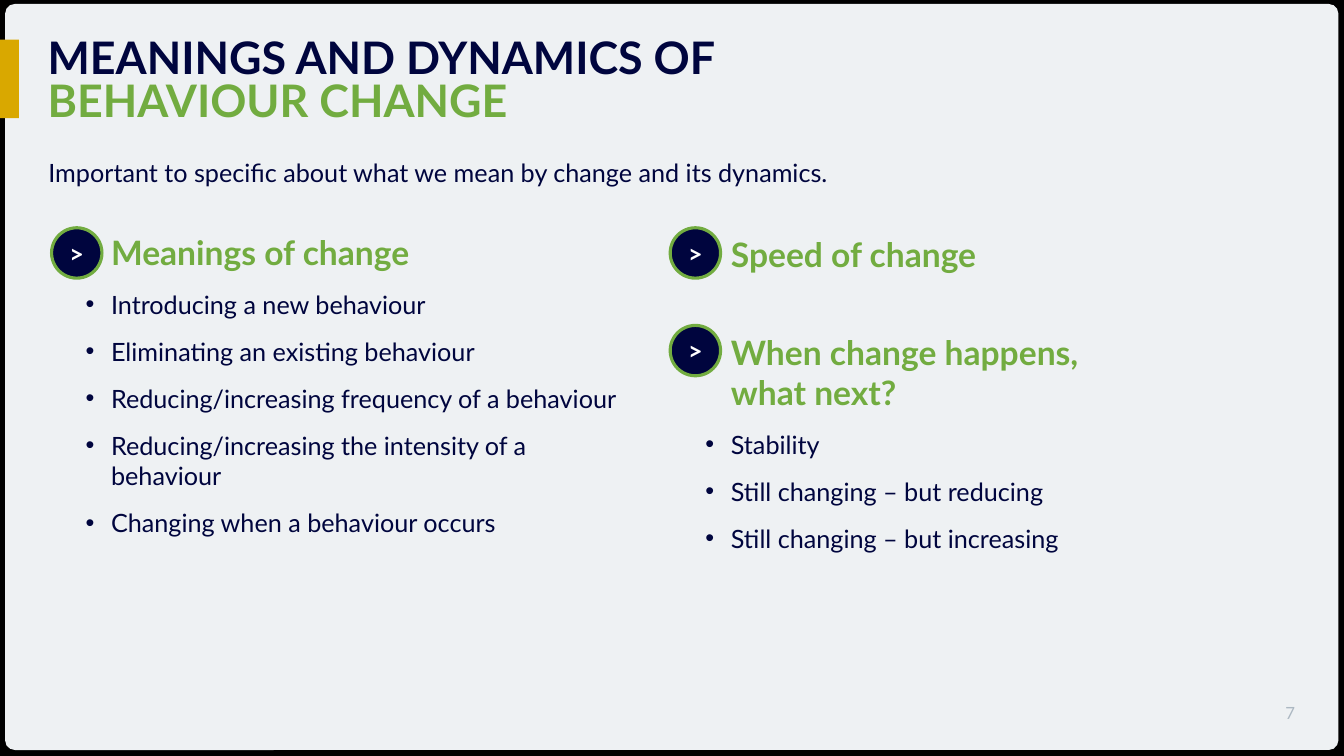
from lxml import etree
from pptx import Presentation
from pptx.dml.color import RGBColor
from pptx.enum.shapes import MSO_SHAPE
from pptx.enum.text import MSO_ANCHOR, PP_ALIGN
from pptx.oxml.ns import qn
from pptx.util import Cm, Pt

RECT, ROUNDED, OVAL = MSO_SHAPE.RECTANGLE, MSO_SHAPE.ROUNDED_RECTANGLE, MSO_SHAPE.OVAL
TOP, MIDDLE, BOTTOM = MSO_ANCHOR.TOP, MSO_ANCHOR.MIDDLE, MSO_ANCHOR.BOTTOM
CENTER, RIGHT = PP_ALIGN.CENTER, PP_ALIGN.RIGHT

BLACK = RGBColor(0x00, 0x00, 0x00)
WHITE = RGBColor(0xFF, 0xFF, 0xFF)
PALE = RGBColor(0xEE, 0xF1, 0xF3)
GOLD = RGBColor(0xD9, 0xA8, 0x00)
NAVY = RGBColor(0x00, 0x05, 0x3E)
GREEN = RGBColor(0x72, 0xAC, 0x40)
GREY = RGBColor(0xAC, 0xB8, 0xC2)

TITLE = ["MEANINGS AND DYNAMICS OF ", "BEHAVIOUR CHANGE"]
INTRO = "Important to specific about what we mean by change and its dynamics."
MEANINGS = [
    ("Meanings of change", [
        "Introducing a new behaviour",
        "Eliminating an existing behaviour",
        "Reducing/increasing frequency of a behaviour",
        "Reducing/increasing the intensity of a behaviour",
        "Changing when a behaviour occurs",
    ]),
]
DYNAMICS = [
    ("Speed of change", []),
    ("When change happens, \vwhat next?", [
        "Stability",
        "Still changing – but reducing",
        "Still changing – but increasing",
    ]),
]
COLUMNS = [
    (MEANINGS, (2.16, 5.84, 14.05, 7.77)),
    (DYNAMICS, (17.78, 5.89, 14.96, 8.13)),
]
MARKER = ">"
PAGE = "7"

SLIDE_W, SLIDE_H = 33.87, 19.05
INDENT = 0.64
MARKER_SIZE, MARKER_TOP, SECTION_STEP = 1.27, 5.74, 2.46
MARKER_LEFTS = [1.3, 16.89]
ITEM_GAP, SECTION_GAP = 12, 41

TITLE_FONT = {"size": Pt(32), "bold": True}
HEADING_FONT = {"size": Pt(24), "bold": True}
BODY_FONT = {"size": Pt(18), "bold": False}
MARKER_FONT = {"size": Pt(18), "bold": True}
PAGE_FONT = {"size": Pt(12), "bold": False}

prs = Presentation()
prs.slide_width, prs.slide_height = Cm(SLIDE_W), Cm(SLIDE_H)
slide = prs.slides.add_slide(prs.slide_layouts[6])


def add_panel(kind, box, fill, line=None):
    panel = slide.shapes.add_shape(kind, *map(Cm, box))
    panel.shadow.inherit = False
    panel.fill.solid()
    panel.fill.fore_color.rgb = fill
    if line is None:
        panel.line.fill.background()
    else:
        panel.line.color.rgb = line
        panel.line.width = Pt(2.25)
    return panel


def add_text(box, anchor=TOP):
    frame = slide.shapes.add_textbox(*map(Cm, box)).text_frame
    frame.word_wrap = True
    frame.vertical_anchor = anchor
    for side in ("left", "top", "right", "bottom"):
        setattr(frame, f"margin_{side}", 0)
    return frame


def style_runs(paragraph, font, color):
    for run in paragraph.runs:
        run.font.name = "Lato"
        run.font.color.rgb = color
        for key, value in font.items():
            setattr(run.font, key, value)


def fill_text(frame, text, font, color, **layout):
    paragraph = frame.paragraphs[0]
    if paragraph.runs:
        paragraph = frame.add_paragraph()
    paragraph.text = text
    for key, value in layout.items():
        setattr(paragraph, key, value)
    style_runs(paragraph, font, color)
    return paragraph


def indent(paragraph, bullet=None):
    properties = paragraph._p.get_or_add_pPr()
    properties.set("marL", str(Cm(INDENT)))
    properties.set("indent", str(-Cm(INDENT) if bullet else 0))
    if bullet:
        etree.SubElement(properties, qn("a:buFont")).set("typeface", "Arial")
        etree.SubElement(properties, qn("a:buChar")).set("char", bullet)


add_panel(RECT, (0, 0, SLIDE_W, SLIDE_H), BLACK)
add_panel(ROUNDED, (0.13, 0.1, 33.6, 18.8), PALE).adjustments[0] = 0.013
add_panel(RECT, (0, 1, 0.48, 1.98), GOLD)

title = fill_text(add_text((1.2, 1, 29.21, 2.18), BOTTOM), "\v".join(TITLE),
                  TITLE_FONT, NAVY, line_spacing=0.8)
title.runs[1].font.color.rgb = GREEN
fill_text(add_text((1.22, 4.04, 26.42, 0.69)), INTRO, BODY_FONT, NAVY, line_spacing=0.9)

for (sections, box), marker_left in zip(COLUMNS, MARKER_LEFTS):
    column = add_text(box)
    for number, (heading, items) in enumerate(sections):
        gap = ITEM_GAP if items else SECTION_GAP
        indent(fill_text(column, heading, HEADING_FONT, GREEN, space_after=Pt(gap)))
        for item in items:
            indent(fill_text(column, item, BODY_FONT, NAVY, space_after=Pt(ITEM_GAP)), "•")
        marker_box = (marker_left, MARKER_TOP + number * SECTION_STEP, MARKER_SIZE, MARKER_SIZE)
        marker = add_panel(OVAL, marker_box, NAVY, GREEN).text_frame
        marker.vertical_anchor = MIDDLE
        fill_text(marker, MARKER, MARKER_FONT, WHITE, alignment=CENTER)

fill_text(add_text((31.55, 17.7, 1.09, 0.51), MIDDLE), PAGE, PAGE_FONT, GREY, alignment=RIGHT)

prs.save("out.pptx")
